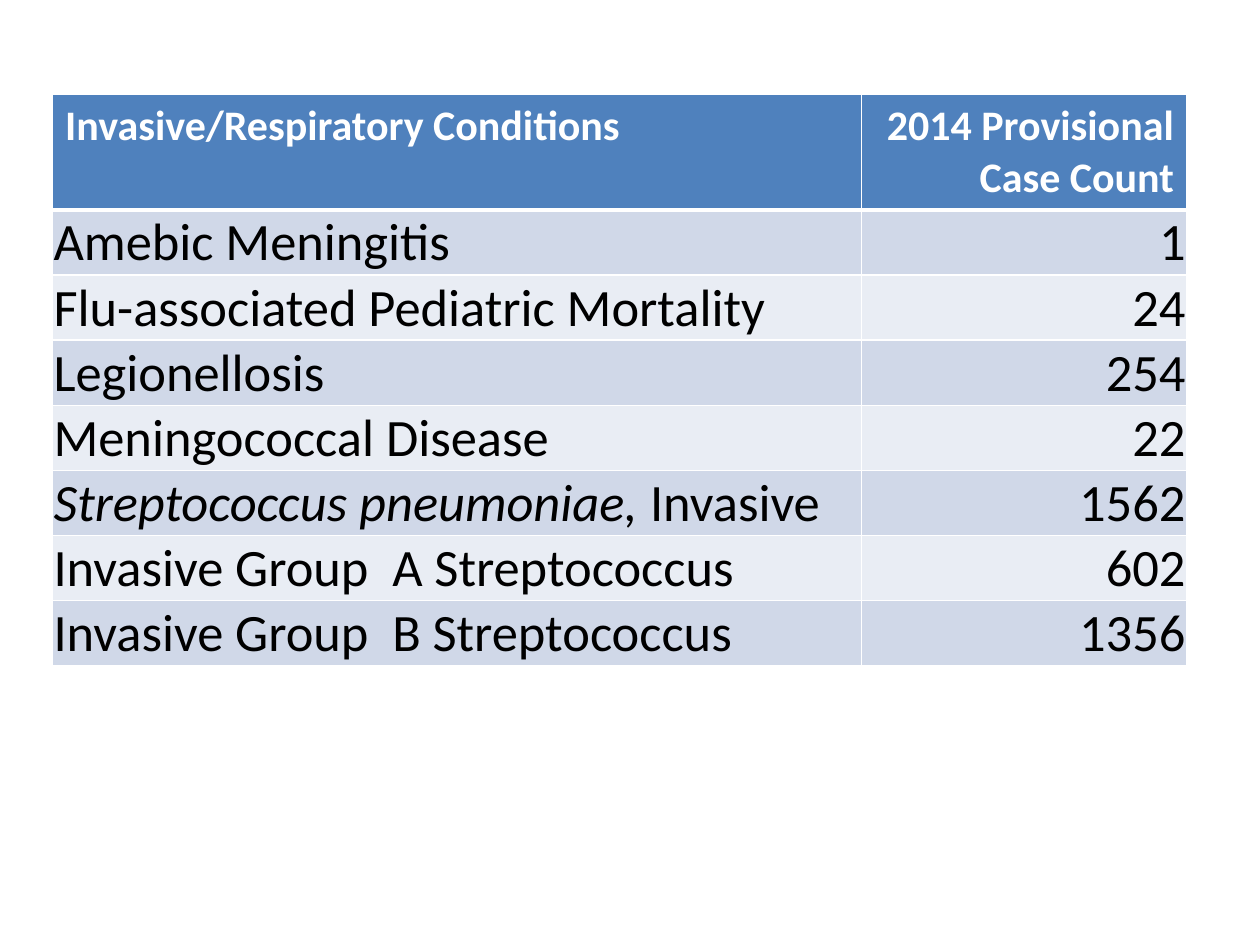
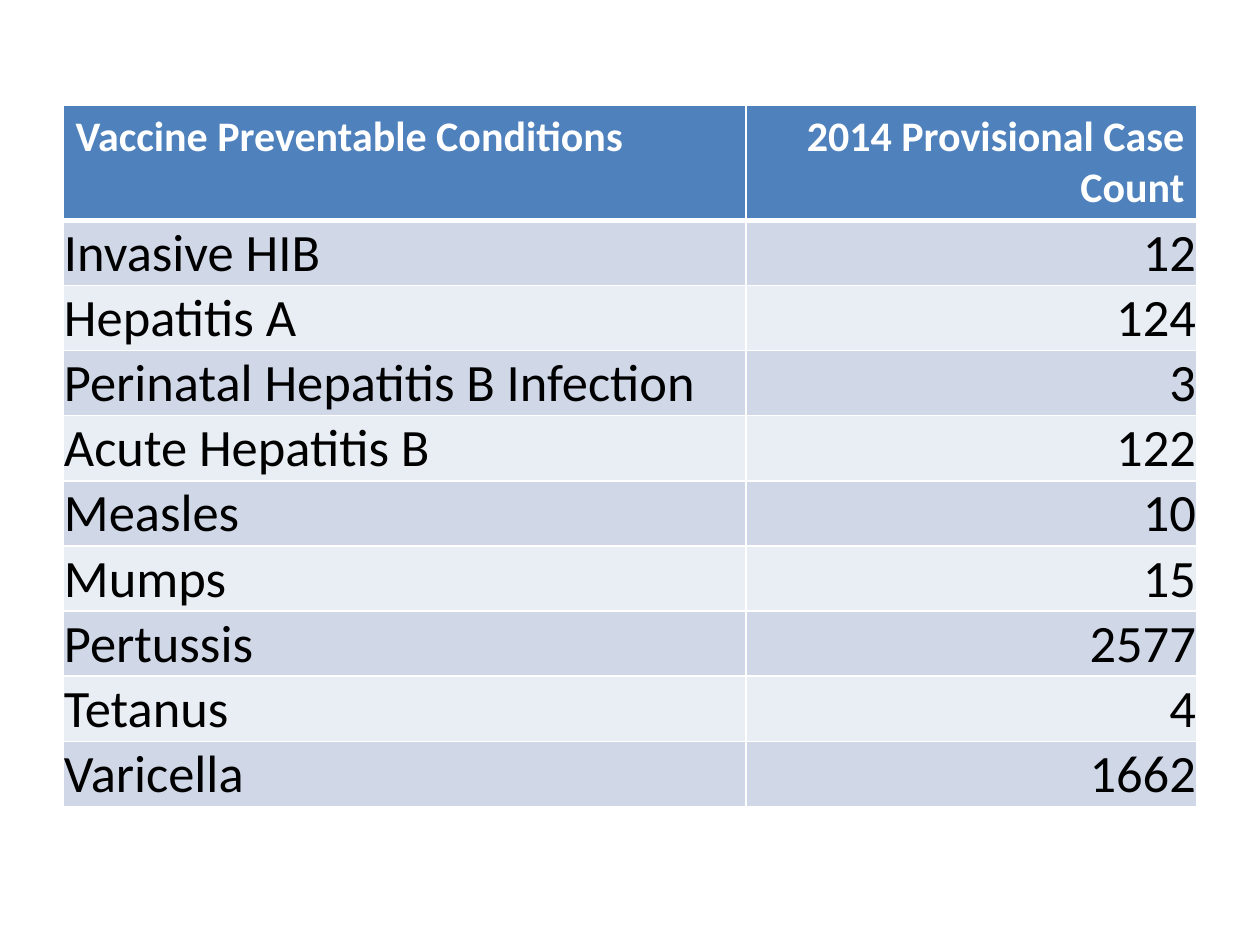
import dataclasses

import lxml.etree
import pptx
import pptx.dml.color
import pptx.enum.text
import pptx.oxml.ns
import pptx.util

Cm = pptx.util.Cm
Pt = pptx.util.Pt
Color = pptx.dml.color.RGBColor
Align = pptx.enum.text.PP_ALIGN
Anchor = pptx.enum.text.MSO_ANCHOR
qn = pptx.oxml.ns.qn


@dataclasses.dataclass(frozen=True)
class Theme:
    font: str = "Calibri"
    header_size: int = 24
    body_size: int = 30
    header_fill: str = "4F81BD"
    header_text: str = "FFFFFF"
    body_text: str = "000000"
    bands: tuple = ("D0D8E8", "E9EDF4")
    border: str = "FFFFFF"
    thin: int = 1
    thick: int = 3


@dataclasses.dataclass(frozen=True)
class Box:
    left: float
    top: float
    width: float
    height: float


THEME = Theme()
ROW_HEIGHT = 1.04
COUNT_HEADING = "2014 Provisional Case Count"

INVASIVE_CASES = [
    ("Amebic Meningitis", 1),
    ("Flu-associated Pediatric Mortality", 24),
    ("Legionellosis", 254),
    ("Meningococcal Disease", 22),
    (("Streptococcus pneumoniae,", " Invasive"), 1562),
    ("Invasive Group  A Streptococcus", 602),
    ("Invasive Group  B Streptococcus", 1356),
]
VACCINE_CASES = [
    ("Invasive HIB", 12),
    ("Hepatitis A", 124),
    ("Perinatal Hepatitis B Infection", 3),
    ("Acute Hepatitis B", 122),
    ("Measles", 10),
    ("Mumps", 15),
    ("Pertussis", 2577),
    ("Tetanus", 4),
    ("Varicella", 1662),
]


def set_borders(cell, top, bottom):
    properties = cell._tc.get_or_add_tcPr()
    widths = {"lnL": THEME.thin, "lnR": THEME.thin, "lnT": top, "lnB": bottom}
    for tag, width in widths.items():
        line = lxml.etree.SubElement(properties, qn(f"a:{tag}"), w=str(Pt(width)))
        fill = lxml.etree.SubElement(line, qn("a:solidFill"))
        lxml.etree.SubElement(fill, qn("a:srgbClr"), val=THEME.border)


def write_cell(cell, content, alignment, size, color, bold):
    paragraph = cell.text_frame.paragraphs[0]
    paragraph.alignment = alignment
    paragraph.font.name = THEME.font
    paragraph.font.size = Pt(size)
    paragraph.font.bold = bold
    paragraph.font.color.rgb = Color.from_string(color)
    if isinstance(content, tuple):
        species, remainder = content
        run = paragraph.add_run()
        run.text = species
        run.font.italic = True
        paragraph.add_run().text = remainder
    else:
        paragraph.add_run().text = str(content)


def fill_cell(cell, color):
    cell.fill.solid()
    cell.fill.fore_color.rgb = Color.from_string(color)


def format_header_cell(cell, content, alignment):
    set_borders(cell, THEME.thin, THEME.thick)
    fill_cell(cell, THEME.header_fill)
    write_cell(cell, content, alignment, THEME.header_size, THEME.header_text, True)


def format_body_cell(cell, content, alignment, row_index):
    set_borders(cell, THEME.thick if row_index == 1 else THEME.thin, THEME.thin)
    fill_cell(cell, THEME.bands[(row_index - 1) % len(THEME.bands)])
    cell.vertical_anchor = Anchor.BOTTOM
    cell.margin_left = cell.margin_right = cell.margin_top = Cm(0.02)
    cell.margin_bottom = Cm(0)
    write_cell(cell, content, alignment, THEME.body_size, THEME.body_text, False)


def add_case_table(slide, box, count_width, heading, cases):
    rows = [(heading, COUNT_HEADING), *cases]
    frame = slide.shapes.add_table(
        len(rows), 2, Cm(box.left), Cm(box.top), Cm(box.width), Cm(box.height)
    )
    table = frame.table
    table.horz_banding = False
    table.columns[0].width = Cm(box.width - count_width)
    table.columns[1].width = Cm(count_width)
    for row_index, row in enumerate(rows):
        table.rows[row_index].height = Cm(ROW_HEIGHT)
        for column_index, alignment in enumerate((Align.LEFT, Align.RIGHT)):
            cell = table.cell(row_index, column_index)
            if row_index == 0:
                format_header_cell(cell, row[column_index], alignment)
            else:
                format_body_cell(cell, row[column_index], alignment, row_index)
    frame.height = Cm(box.height)


def add_case_slide(presentation, box, count_width, heading, cases):
    slide = presentation.slides.add_slide(presentation.slide_layouts[6])
    add_case_table(slide, box, count_width, heading, cases)


def main():
    presentation = pptx.Presentation()
    presentation.slide_width = Cm(25.4)
    presentation.slide_height = Cm(19.05)
    add_case_slide(
        presentation, Box(1.06, 1.91, 22.86, 11.35), 6.55,
        "Invasive/Respiratory Conditions", INVASIVE_CASES,
    )
    add_case_slide(
        presentation, Box(1.27, 2.12, 22.86, 13.94), 9.09,
        "Vaccine Preventable Conditions", VACCINE_CASES,
    )
    presentation.save("out.pptx")


if __name__ == "__main__":
    main()
